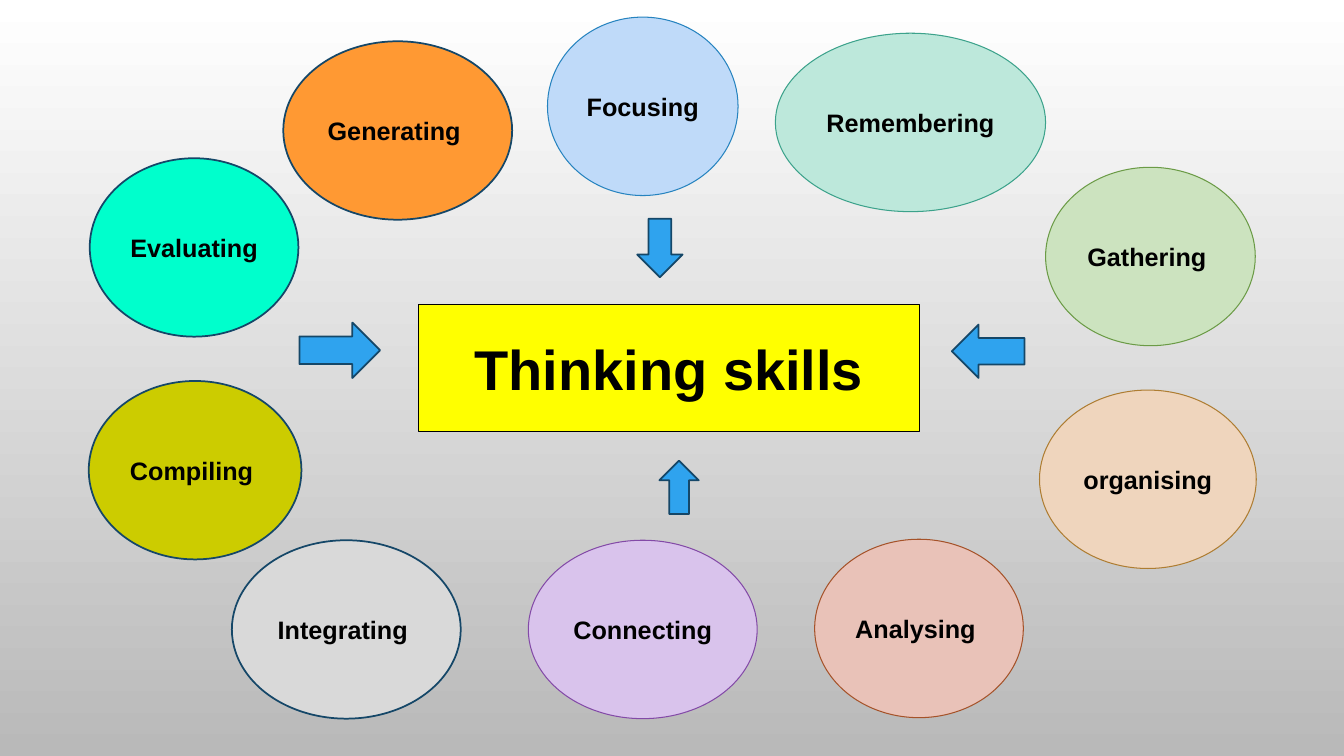
from dataclasses import dataclass

from pptx import Presentation
from pptx import util as u
from pptx.dml.color import RGBColor
from pptx.enum import shapes, text

Kind = shapes.MSO_SHAPE


@dataclass(frozen=True)
class Theme:
    font: str = "Arial"
    ink: str = "000000"
    title_fill: str = "FFFF00"
    arrow_fill: str = "2FA3EE"
    outline: str = "154768"
    sky: str = "FFFFFF"
    ground: str = "B9B9B9"
    title_size: int = 40
    skill_size: int = 18
    thin: float = 0.75
    thick: float = 1.25


THEME = Theme()
SKILL_HEIGHT = 1.77

SKILLS = [
    ("Integrating ", 2.3, 5.36, 2.27, "D9D9D9", THEME.outline),
    ("Focusing ", 5.43, 0.17, 1.89, "BFDAF9", "2683BF"),
    ("Remembering ", 7.69, 0.33, 2.68, "BDE8DB", "3CA28B"),
    ("Analysing ", 8.08, 5.35, 2.07, "E9C2B8", "A55229"),
    ("Connecting ", 5.24, 5.36, 2.27, "D9C3EC", "834AA7"),
    ("Compiling ", 0.88, 3.78, 2.11, "CCCC00", THEME.outline),
    ("Evaluating ", 0.89, 1.57, 2.07, "00FFCC", THEME.outline),
    ("Generating ", 2.81, 0.41, 2.27, "FF9933", THEME.outline),
    ("organising", 10.31, 3.87, 2.15, "EFD5BD", "AE7D32"),
    ("Gathering ", 10.37, 1.66, 2.08, "CCE3BF", "6B9B46"),
]

ARROWS = [
    (Kind.RIGHT_ARROW, (2.97, 3.2, 0.8, 0.55)),
    (Kind.LEFT_ARROW, (9.44, 3.22, 0.72, 0.53)),
    (Kind.DOWN_ARROW, (6.32, 2.17, 0.45, 0.58)),
    (Kind.UP_ARROW, (6.54, 4.57, 0.39, 0.53)),
]


def color(value):
    return RGBColor.from_string(value)


def paint_background(page):
    fill = page.background.fill
    fill.gradient()
    fill.gradient_angle = 270
    for stop, value, position in zip(
        fill.gradient_stops, (THEME.sky, THEME.ground), (0, 1)
    ):
        stop.color.rgb = color(value)
        stop.position = position


def add_figure(page, kind, place, fill, line, weight):
    figure = page.shapes.add_shape(kind, *map(u.Inches, place))
    figure.shadow.inherit = False
    figure.fill.solid()
    figure.fill.fore_color.rgb = color(fill)
    figure.line.color.rgb = color(line)
    figure.line.width = u.Pt(weight)
    return figure


def add_label(figure, words, size):
    frame = figure.text_frame
    frame.word_wrap = True
    frame.vertical_anchor = text.MSO_ANCHOR.MIDDLE
    para = frame.paragraphs[0]
    para.alignment = text.PP_ALIGN.CENTER
    span = para.add_run()
    span.text = words
    span.font.name = THEME.font
    span.font.size = u.Pt(size)
    span.font.bold = True
    span.font.color.rgb = color(THEME.ink)


def add_skill(page, words, left, top, width, fill, line):
    weight = THEME.thick if line == THEME.outline else THEME.thin
    place = (left, top, width, SKILL_HEIGHT)
    oval = add_figure(page, Kind.OVAL, place, fill, line, weight)
    add_label(oval, words, THEME.skill_size)


def main():
    deck = Presentation()
    deck.slide_width = u.Inches(13.33)
    deck.slide_height = u.Inches(7.5)
    page = deck.slides.add_slide(deck.slide_layouts[6])
    paint_background(page)

    title = add_figure(page, Kind.RECTANGLE, (4.15, 3.02, 4.97, 1.26),
                       THEME.title_fill, THEME.ink, THEME.thin)
    add_label(title, "Thinking skills", THEME.title_size)
    for skill in SKILLS:
        add_skill(page, *skill)
    for kind, place in ARROWS:
        add_figure(page, kind, place, THEME.arrow_fill, THEME.outline, THEME.thick)

    deck.save("out.pptx")


if __name__ == "__main__":
    main()
